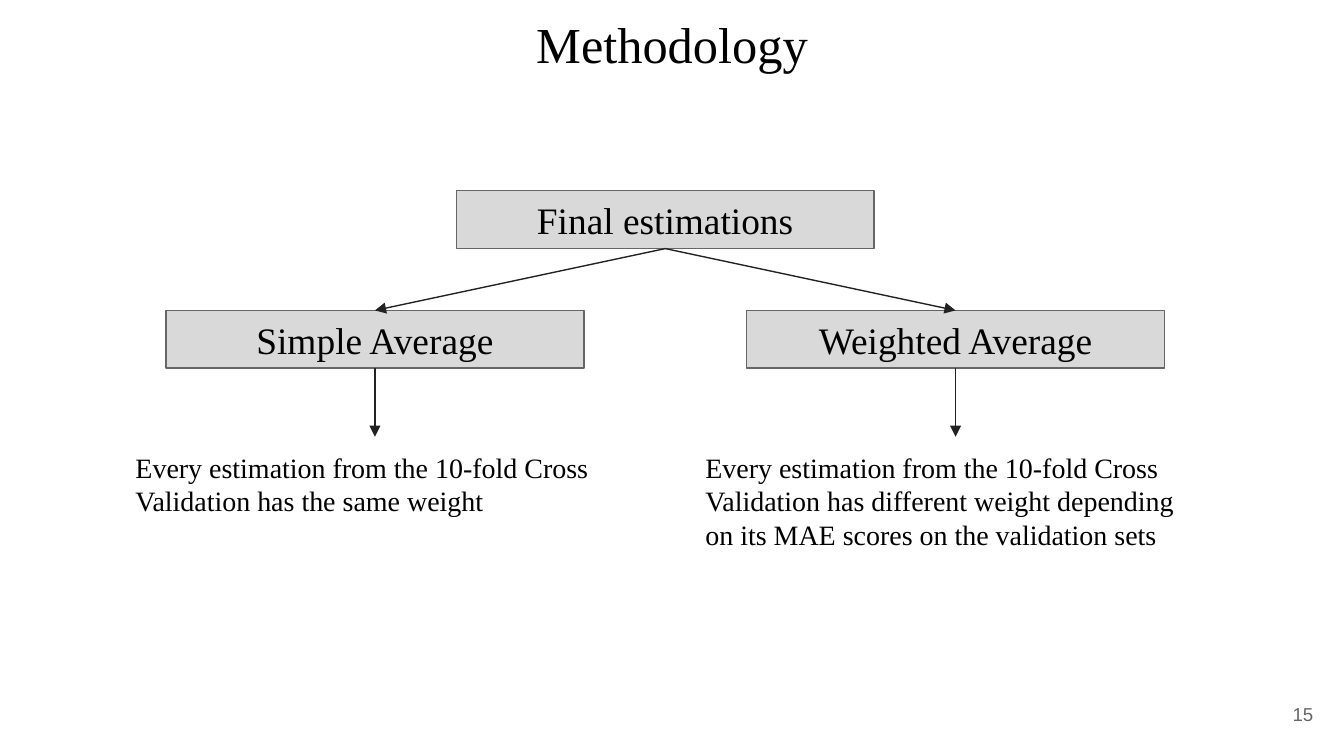
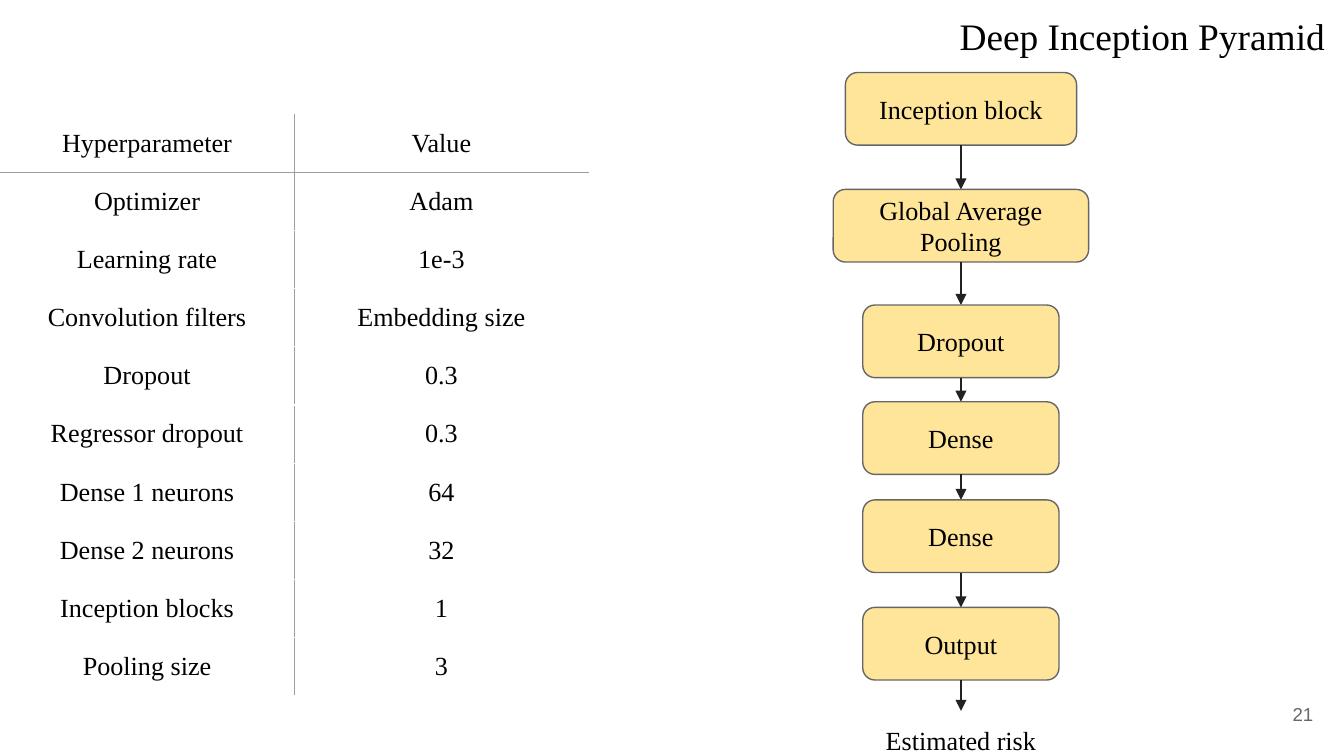
from lxml import etree
from pptx import Presentation, util as u
from pptx.dml.color import RGBColor
from pptx.enum import shapes, text
from pptx.oxml.ns import qn

# Shared look
SERIF, SANS = "Times New Roman", "Arial"
BLACK, GREY, DARK, RULE, WHITE = "000000", "666666", "222222", "9E9E9E", "FFFFFF"
SILVER, SAND = "D9D9D9", "FFE599"
W, H = 10, 5.625
LINE_PT = 0.75
LEFT, CENTER, RIGHT = text.PP_ALIGN.LEFT, text.PP_ALIGN.CENTER, text.PP_ALIGN.RIGHT
TOP, MIDDLE = text.MSO_ANCHOR.TOP, text.MSO_ANCHOR.MIDDLE
rgb = RGBColor.from_string


def write(sp, words, size, align=CENTER, anchor=MIDDLE, box=None, fill=None, font=SERIF, color=BLACK):
    """Place and format a shape, placeholder or (without a box) a table cell."""
    tf = sp.text_frame
    tf.text = words
    if box:
        for name, value in zip(("left", "top", "width", "height"), box):
            setattr(sp, name, u.Inches(value))
        tf.word_wrap = True
        tf.auto_size = text.MSO_AUTO_SIZE.NONE
    frame = tf if box else sp
    frame.vertical_anchor = anchor
    for side in ("left", "top", "right", "bottom"):
        setattr(frame, "margin_" + side, u.Inches(0.1))
    p = tf.paragraphs[0]
    p.alignment = align
    for name, value in {"name": font, "size": u.Pt(size)}.items():
        setattr(p.runs[0].font, name, value)
    p.runs[0].font.color.rgb = rgb(color)
    if fill:
        sp.shadow.inherit = False
        sp.fill.solid()
        sp.fill.fore_color.rgb = rgb(fill)
        sp.line.color.rgb = rgb(GREY)
        sp.line.width = u.Pt(LINE_PT)


def arrow(s, *ends):
    """Draw an arrow from (x1, y1) to (x2, y2)."""
    cn = s.shapes.add_connector(shapes.MSO_CONNECTOR.STRAIGHT, *map(u.Inches, ends))
    cn.line.color.rgb = rgb(DARK)
    cn.line.width = u.Pt(LINE_PT)
    etree.SubElement(cn.line._get_or_add_ln(), qn("a:tailEnd"), type="triangle")
    etree.SubElement(cn._element.spPr, qn("a:effectLst"))


prs = Presentation()
prs.slide_width, prs.slide_height = u.Inches(W), u.Inches(H)

# Titles and page numbers
slides = []
for title, size, align, box, page in (
    ("Methodology", 27, CENTER, (0.34, 0, 9.32, 0.63), "15"),
    ("Deep Inception Pyramid", 20, RIGHT, (3.49, 0, 6.47, 0.54), "21"),
):
    s = prs.slides.add_slide(prs.slide_layouts[5])
    write(s.shapes.title, title, size, align, TOP, box)
    write(s.shapes.add_textbox(0, 0, 0, 0), page, 10, RIGHT, MIDDLE,
          (9.27, 5.1, 0.6, 0.43), font=SANS, color=GREY)
    slides.append(s)
methodology, pyramid = slides

# Methodology: one root box, two branches with a note below each
root_x, root_y, branch_y, note_y = 4.95, 1.42, 2.31, 3.25
box_w, box_h, column = 3.11, 0.43, 2.16
for words, col, y in (
    ("Final estimations", 0, root_y),
    ("Simple Average", -1, branch_y),
    ("Weighted Average", 1, branch_y),
):
    sp = methodology.shapes.add_shape(shapes.MSO_SHAPE.RECTANGLE, 0, 0, 0, 0)
    x = root_x + col * column
    write(sp, words, 20, box=(x - box_w / 2, y, box_w, box_h), fill=SILVER)

for col, left, width, height, note in (
    (-1, 0.91, 3.76, 0.71,
     "Every estimation from the 10-fold Cross Validation has the same weight"),
    (1, 5.15, 3.94, 0.96,
     "Every estimation from the 10-fold Cross Validation has different weight "
     "depending on its MAE scores on the validation sets"),
):
    x = root_x + col * column
    arrow(methodology, root_x, root_y + box_h, x, branch_y)
    arrow(methodology, x, branch_y + box_h, x, note_y)
    write(methodology.shapes.add_textbox(0, 0, 0, 0), note, 15, LEFT, TOP,
          (left, note_y, width, height))

# Pyramid: hyperparameter table
rows = (
    ("Hyperparameter", "Value"),
    ("Optimizer", "Adam"),
    ("Learning rate", "1e-3"),
    ("Convolution filters", "Embedding size"),
    ("Dropout", "0.3"),
    ("Regressor dropout", "0.3"),
    ("Dense 1 neurons", "64"),
    ("Dense 2 neurons", "32"),
    ("Inception blocks", "1"),
    ("Pooling size", "3"),
)
table = pyramid.shapes.add_table(len(rows), 2, 0, u.Inches(0.85),
                                 u.Inches(4.38), u.Inches(4.33)).table
table.first_row = table.horz_banding = False
for i, row in enumerate(rows):
    for j, words in enumerate(row):
        cell = table.cell(i, j)
        write(cell, words, 14)
        cell.fill.background()
        # Grey rules only between the columns and under the header
        ruled = {"lnL": j == 1, "lnR": j == 0, "lnT": i == 1, "lnB": i == 0}
        for k, (tag, grey) in enumerate(ruled.items()):
            ln = etree.Element(qn("a:" + tag), w=str(u.Pt(LINE_PT)))
            solid = etree.SubElement(ln, qn("a:solidFill"))
            etree.SubElement(solid, qn("a:srgbClr"), val=RULE if grey else WHITE)
            cell._tc.get_or_add_tcPr().insert(k, ln)

# Pyramid: chain of layers, each with an arrow to the next
axis, layer_h, result_y = 7.15, 0.54, 5.29
layers = (
    ("Inception block", 1.72, 0.54),
    ("Global Average Pooling", 1.9, 1.41),
    ("Dropout", 1.46, 2.27),
    ("Dense", 1.46, 2.99),
    ("Dense", 1.46, 3.72),
    ("Output", 1.46, 4.52),
)
next_tops = [y for _, _, y in layers[1:]] + [result_y]
for (words, width, y), next_y in zip(layers, next_tops):
    sp = pyramid.shapes.add_shape(shapes.MSO_SHAPE.ROUNDED_RECTANGLE, 0, 0, 0, 0)
    write(sp, words, 14, box=(axis - width / 2, y, width, layer_h), fill=SAND)
    arrow(pyramid, axis, y + layer_h, axis, next_y)
write(pyramid.shapes.add_textbox(0, 0, 0, 0), "Estimated risk", 14, CENTER, TOP,
      (axis - 1.01, result_y, 2.02, 0.44))

prs.save("out.pptx")
